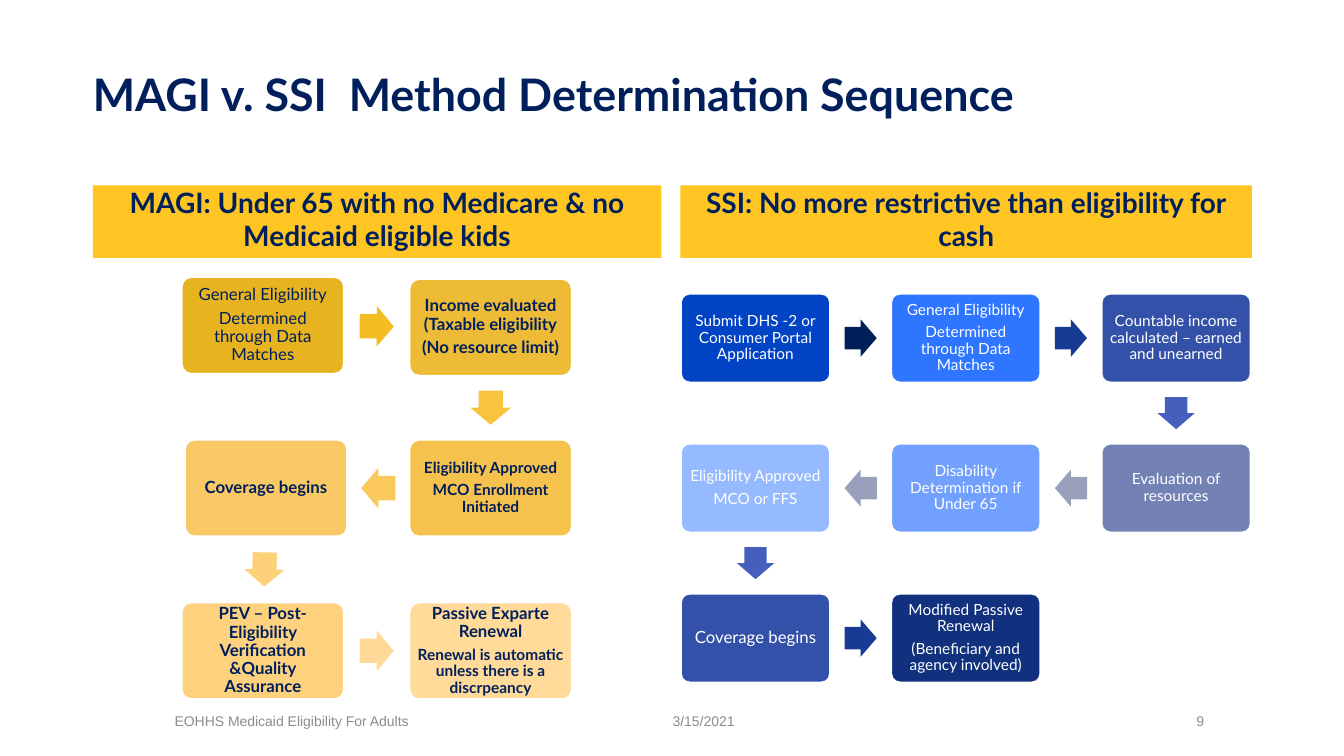
import math
from dataclasses import dataclass
from typing import Any

import pptx
import pptx.dml.color
import pptx.enum.shapes
import pptx.enum.text
import pptx.util

Cm, Pt = pptx.util.Cm, pptx.util.Pt
Kind = pptx.enum.shapes.MSO_SHAPE
Align = pptx.enum.text.PP_ALIGN
Anchor = pptx.enum.text.MSO_ANCHOR


@dataclass(frozen=True)
class Theme:
    navy: str = "001F5B"
    white: str = "FFFFFF"
    gold: str = "FFC623"
    gray: str = "8C8C8C"
    face: str = "Lato"
    plain: str = "Arial"
    title: int = 32
    head: int = 20
    large: int = 12
    small: int = 11
    foot: int = 10


@dataclass(frozen=True)
class Step:
    col: int
    row: int
    fill: str
    lines: tuple[str, ...]
    arrow: str = ""  # colour of the arrow leading here
    sizes: tuple[int, ...] = (12, 12)
    bold: bool = True
    dx: float = 0
    dy: float = 0


@dataclass(frozen=True)
class Flow:
    head: str
    left: float
    width: float
    origin: tuple[float, float]
    pitch: tuple[float, float]
    box: tuple[float, float]
    arrow: tuple[float, float]
    ink: str
    steps: tuple[Step, ...]


LOOK = Theme()
BIG, LOW = (LOOK.large,) * 2, (LOOK.small,) * 2

MAGI = Flow(
    "MAGI: Under 65 with no Medicare & no Medicaid eligible kids",
    2.34, 14.33, (4.57, 6.97), (5.74, 4.1), (4.11, 2.46), (0.86, 1.02), LOOK.navy,
    (
        Step(0, 0, "E7B420", ("General Eligibility", "Determined through Data Matches"),
             bold=False),
        Step(1, 0, "EEBB36", ("Income evaluated (Taxable eligibility", "(No resource limit)"),
             "F4BD21", dy=0.05),
        Step(1, 1, "F4C24D", ("Eligibility Approved", "MCO Enrollment Initiated"),
             "F8C33E", LOW),
        Step(0, 1, "F9C965", ("Coverage begins",), "FBC95B", dx=0.08),
        Step(0, 2, "FDD17E", ("PEV – Post-Eligibility Verification &Quality Assurance",),
             "FDD179"),
        Step(1, 2, "FFDA99", ("Passive Exparte Renewal",
                              "Renewal is automatic unless there is a discrpeancy"),
             "FFD998", (LOOK.large, LOOK.small)),
    ),
)

SSI = Flow(
    "SSI: No more restrictive than eligibility for cash",
    17.15, 14.4, (17.15, 7.39), (5.3, 3.78), (3.78, 2.26), (0.81, 0.94), LOOK.white,
    (
        Step(0, 0, "0043C4", ("Submit DHS -2 or Consumer Portal Application",),
             "", LOW, False),
        Step(1, 0, "2E75FF", ("General Eligibility", "Determined through Data Matches"),
             "001E57", LOW, False),
        Step(2, 0, "3351A8", ("Countable income calculated – earned and unearned",),
             "173B95", LOW, False),
        Step(2, 1, "7381B4", ("Evaluation of resources",), "4560BC", LOW, False),
        Step(1, 1, "71A0FF", ("Disability Determination if Under 65",), "9AA0BC", LOW, False),
        Step(0, 1, "96BAFF", ("Eligibility Approved", "MCO or FFS"), "9AA0BC", LOW, False),
        Step(0, 2, "3351A8", ("Coverage begins",), "4560BC", BIG, False),
        Step(1, 2, "11317E", ("Modified Passive Renewal", "(Beneficiary and agency involved)"),
             "173B95", LOW, False),
    ),
)


def tint(code: str) -> Any:
    return pptx.dml.color.RGBColor.from_string(code)


def apply(target: Any, form: dict[str, Any]) -> None:
    for key, value in form.items():
        setattr(target, key, value)


def frame(shape: Any, anchor: Any, inset: float = 0) -> Any:
    box = shape.text_frame
    apply(box, {"word_wrap": True, "auto_size": pptx.enum.text.MSO_AUTO_SIZE.NONE,
                "vertical_anchor": anchor}
          | {f"margin_{side}": Cm(inset) for side in ("left", "top", "right", "bottom")})
    return box


def write(para: Any, text: str, size: int, color: str, bold: bool = False,
          face: str = LOOK.face, **form: Any) -> None:
    run = para.add_run()
    run.text = text
    apply(run.font, {"name": face, "size": Pt(size), "bold": bold})
    run.font.color.rgb = tint(color)
    apply(para, form)


def block(slide: Any, kind: Any, at: tuple[float, ...], fill: str) -> Any:
    shape = slide.shapes.add_shape(kind, *map(Cm, at))
    shape.shadow.inherit = False
    shape.fill.solid()
    shape.fill.fore_color.rgb = tint(fill)
    shape.line.fill.background()
    return shape


def place(flow: Flow, step: Step) -> tuple[float, float]:
    return (flow.origin[0] + step.col * flow.pitch[0] + step.dx,
            flow.origin[1] + step.row * flow.pitch[1] + step.dy)


def card(slide: Any, flow: Flow, step: Step) -> None:
    shape = block(slide, Kind.ROUNDED_RECTANGLE, (*place(flow, step), *flow.box), step.fill)
    shape.adjustments[0] = 0.1
    shape.line.color.rgb = tint(LOOK.white)
    shape.line.width = Pt(2)
    body = frame(shape, Anchor.MIDDLE, 0.13)
    for num, (text, size) in enumerate(zip(step.lines, step.sizes)):
        para = body.add_paragraph() if num else body.paragraphs[0]
        write(para, text, size, flow.ink, step.bold, alignment=Align.CENTER,
              line_spacing=0.9, space_after=Pt(4))


def arrow(slide: Any, flow: Flow, prev: Step, step: Step) -> None:
    (x1, y1), (x2, y2) = place(flow, prev), place(flow, step)
    wide, high = flow.arrow
    left = (x1 + x2 + flow.box[0] - wide) / 2
    top = (y1 + y2 + flow.box[1] - high) / 2
    shape = block(slide, Kind.RIGHT_ARROW, (left, top, wide, high), step.arrow)
    shape.adjustments[0], shape.adjustments[1] = 0.6, 0.5
    shape.rotation = math.degrees(math.atan2(y2 - y1, x2 - x1)) % 360


def draw(slide: Any, flow: Flow) -> None:
    band = block(slide, Kind.RECTANGLE, (flow.left, 4.67, flow.width, 1.83), LOOK.gold)
    write(frame(band, Anchor.TOP).paragraphs[0], flow.head, LOOK.head, LOOK.navy, True,
          alignment=Align.CENTER)
    for step in flow.steps:
        card(slide, flow, step)
    for prev, step in zip(flow.steps, flow.steps[1:]):
        arrow(slide, flow, prev, step)


def main() -> None:
    deck = pptx.Presentation()
    apply(deck, {"slide_width": Cm(33.87), "slide_height": Cm(19.05)})
    slide = deck.slides.add_slide(deck.slide_layouts[5])

    # Title
    title = slide.shapes.title
    apply(title, {"left": Cm(2.34), "top": Cm(0.76), "width": Cm(29.85), "height": Cm(3.18)})
    write(frame(title, Anchor.MIDDLE).paragraphs[0],
          "MAGI v. SSI  Method Determination Sequence", LOOK.title, LOOK.navy, True,
          alignment=Align.LEFT)

    # Both sequences
    for flow in (MAGI, SSI):
        draw(slide, flow)

    # Footer
    for text, left, width in (("EOHHS Medicaid Eligibility For Adults", 4.4, 10.72),
                              ("3/15/2021", 16.95, 7.9), ("9", 30.15, 2.03)):
        note = slide.shapes.add_textbox(Cm(left), Cm(17.65), Cm(width), Cm(1.02))
        write(frame(note, Anchor.MIDDLE).paragraphs[0], text, LOOK.foot, LOOK.gray,
              face=LOOK.plain)

    deck.save("out.pptx")


if __name__ == "__main__":
    main()
